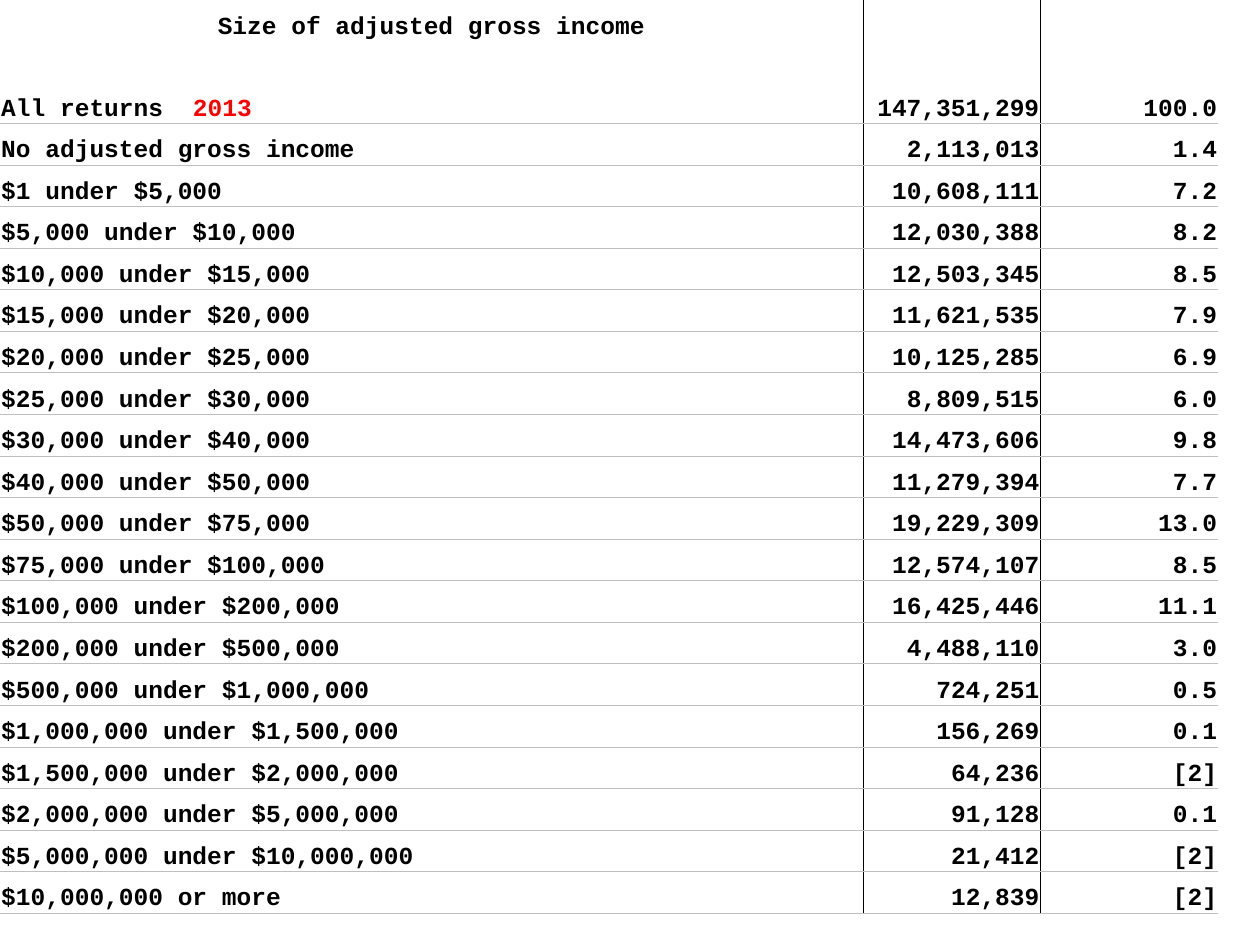
from lxml import etree
from pptx import Presentation
from pptx import util as u
from pptx.dml.color import RGBColor
from pptx.enum import text
from pptx.oxml import ns

COLORS = {"text": "000000", "year": "FF0000", "column": "000000", "row": "BFBFBF"}
FONT = "Courier New"
COLUMN_WIDTHS = (6.85, 1.41, 1.41)
ROW_HEIGHT, TOTAL_HEIGHT = 0.33, 0.65
ROWS = [
    ("Size of adjusted gross income", "", ""),
    ("All returns  ", "147,351,299", "100.0"),
    ("No adjusted gross income", "2,113,013", "1.4"),
    ("$1 under $5,000", "10,608,111", "7.2"),
    ("$5,000 under $10,000", "12,030,388", "8.2"),
    ("$10,000 under $15,000", "12,503,345", "8.5"),
    ("$15,000 under $20,000", "11,621,535", "7.9"),
    ("$20,000 under $25,000", "10,125,285", "6.9"),
    ("$25,000 under $30,000", "8,809,515", "6.0"),
    ("$30,000 under $40,000", "14,473,606", "9.8"),
    ("$40,000 under $50,000", "11,279,394", "7.7"),
    ("$50,000 under $75,000", "19,229,309", "13.0"),
    ("$75,000 under $100,000", "12,574,107", "8.5"),
    ("$100,000 under $200,000", "16,425,446", "11.1"),
    ("$200,000 under $500,000", "4,488,110", "3.0"),
    ("$500,000 under $1,000,000", "724,251", "0.5"),
    ("$1,000,000 under $1,500,000", "156,269", "0.1"),
    ("$1,500,000 under $2,000,000", "64,236", "[2]"),
    ("$2,000,000 under $5,000,000", "91,128", "0.1"),
    ("$5,000,000 under $10,000,000", "21,412", "[2]"),
    ("$10,000,000 or more", "12,839", "[2]"),
]


def rgb(name):
    """Return the named colour."""
    return RGBColor.from_string(COLORS[name])


def add_border(cell, side, color):
    """Draw one side of a cell, or clear it when no colour is given."""
    properties = cell._tc.get_or_add_tcPr()
    line = etree.SubElement(properties, ns.qn(f"a:ln{side}"), w=str(u.Pt(0.5)))
    if color is None:
        etree.SubElement(line, ns.qn("a:noFill"))
    else:
        fill = etree.SubElement(line, ns.qn("a:solidFill"))
        etree.SubElement(fill, ns.qn("a:srgbClr"), val=COLORS[color])


def style_cell(cell, row, column):
    """Set the margins, rules and fill of a cell by its place in the grid."""
    cell.margin_left = cell.margin_right = cell.margin_top = u.Inches(0.01)
    cell.margin_bottom = 0
    cell.vertical_anchor = text.MSO_ANCHOR.BOTTOM
    add_border(cell, "L", "column" if column > 0 else None)
    add_border(cell, "R", "column" if column < len(COLUMN_WIDTHS) - 1 else None)
    add_border(cell, "T", "row" if row > 1 else None)
    add_border(cell, "B", "row" if row > 0 else None)
    cell.fill.background()


def write_cell(cell, words, alignment):
    """Write bold text in a cell."""
    para = cell.text_frame.paragraphs[0]
    para.alignment = alignment
    para.font.name = FONT
    para.font.size = u.Pt(14)
    para.font.bold = True
    para.font.color.rgb = rgb("text")
    if words:
        para.add_run().text = words
    return para


def add_income_table(page):
    """Add the table of returns by size of income."""
    heights = [ROW_HEIGHT] * len(ROWS)
    heights[1] = TOTAL_HEIGHT
    frame = page.shapes.add_table(
        len(ROWS), len(COLUMN_WIDTHS), 0, 0,
        u.Inches(sum(COLUMN_WIDTHS)), u.Inches(sum(heights)),
    )
    table = frame.table
    table.first_row = table.horz_banding = False
    for column, width in zip(table.columns, COLUMN_WIDTHS):
        column.width = u.Inches(width)
    for row, height in zip(table.rows, heights):
        row.height = u.Inches(height)
    for r, values in enumerate(ROWS):
        for c, words in enumerate(values):
            cell = table.cell(r, c)
            style_cell(cell, r, c)
            label = text.PP_ALIGN.LEFT if r else text.PP_ALIGN.CENTER
            para = write_cell(cell, words, text.PP_ALIGN.RIGHT if c else label)
            if (r, c) == (1, 0):
                span = para.add_run()
                span.text = "2013"
                span.font.color.rgb = rgb("year")


def main():
    """Build and save the deck."""
    deck = Presentation()
    deck.slide_width, deck.slide_height = u.Inches(10), u.Inches(7.5)
    page = deck.slides.add_slide(deck.slide_layouts[6])
    add_income_table(page)
    deck.save("out.pptx")


if __name__ == "__main__":
    main()
